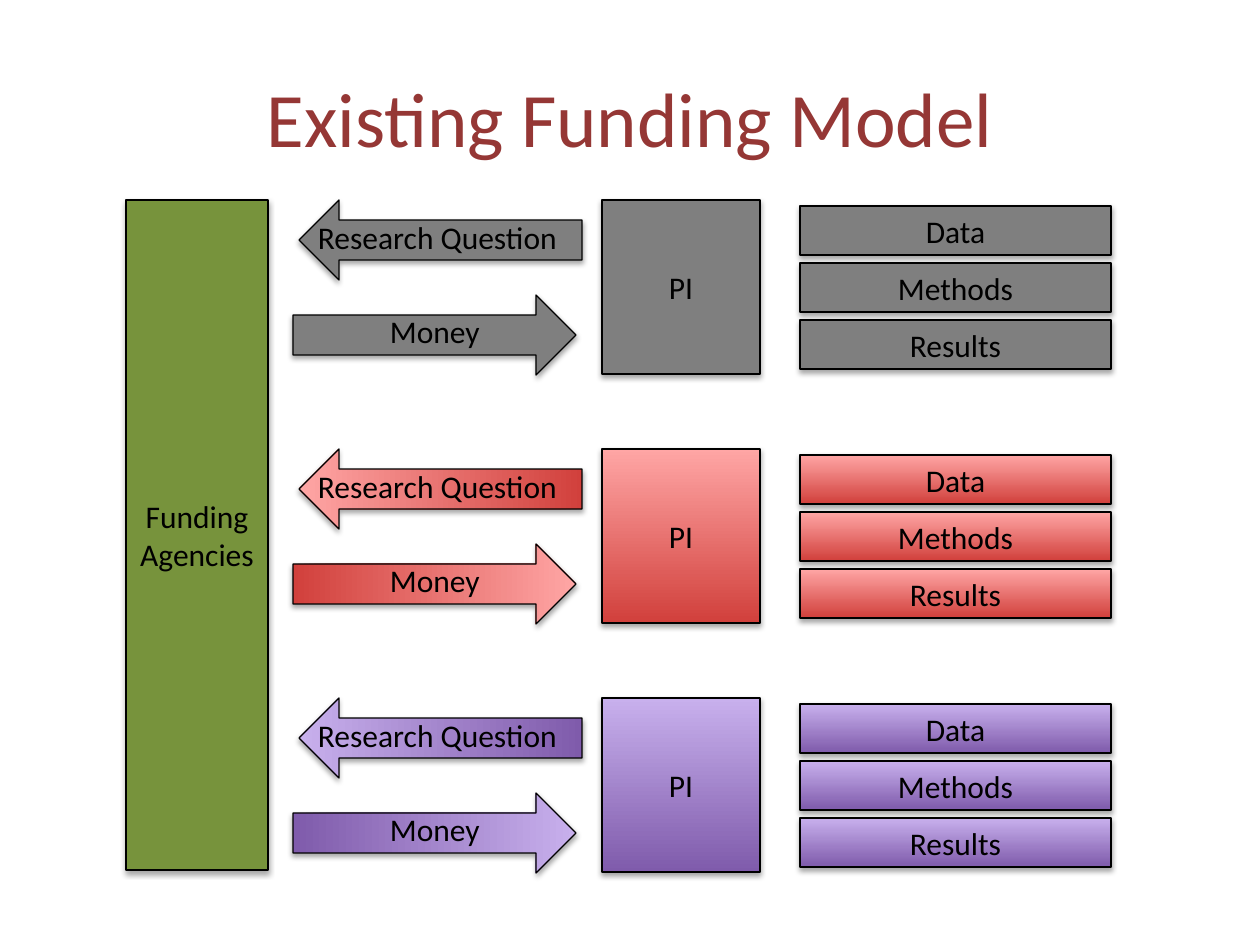
from pptx import Presentation
from pptx.dml.color import RGBColor
from pptx.enum.shapes import MSO_SHAPE
from pptx.enum.text import MSO_ANCHOR, PP_ALIGN
from pptx.util import Emu, Pt

BLACK = RGBColor(0x00, 0x00, 0x00)
MAROON = RGBColor(0x95, 0x37, 0x35)
GREEN = RGBColor(0x77, 0x93, 0x3C)
GRAY = RGBColor(0x7F, 0x7F, 0x7F)
DARK_RED = RGBColor(0xD1, 0x40, 0x3C)
LIGHT_RED = RGBColor(0xFF, 0xA6, 0xA5)
DARK_PURPLE = RGBColor(0x7F, 0x5B, 0xAB)
LIGHT_PURPLE = RGBColor(0xC8, 0xB0, 0xED)

PROJECT_COLORS = [(GRAY,), (DARK_RED, LIGHT_RED), (DARK_PURPLE, LIGHT_PURPLE)]
PROJECT_TOP = 200
PROJECT_PITCH = 249
PRODUCTS = ["Data", "Methods", "Results"]
PRODUCT_PITCH = 57


def px(length):
    return Emu(round(length * 914400 / 126))


class Diagram:
    font = "Calibri"
    text_size = 18
    title_size = 44
    line_width = 0.75

    def __init__(self, slide):
        self.slide = slide

    def set_text(self, frame, text, size, color, align):
        frame.text = text
        para = frame.paragraphs[0]
        para.alignment = align
        for span in para.runs:
            span.font.name = self.font
            span.font.size = Pt(size)
            span.font.color.rgb = color

    def paint(self, shape, colors):
        if len(colors) == 1:
            shape.fill.solid()
            shape.fill.fore_color.rgb = colors[0]
        else:
            shape.fill.gradient()
            shape.fill.gradient_angle = 90
            for stop, color in zip(shape.fill.gradient_stops, colors):
                stop.color.rgb = color
        shape.line.color.rgb = BLACK
        shape.line.width = Pt(self.line_width)

    def title(self, text, left, top, width, height):
        box = self.slide.shapes.title
        box.left, box.top, box.width, box.height = map(px, (left, top, width, height))
        box.text_frame.vertical_anchor = MSO_ANCHOR.MIDDLE
        self.set_text(box.text_frame, text, self.title_size, MAROON, PP_ALIGN.CENTER)

    def block(self, text, left, top, width, height, colors):
        shape = self.slide.shapes.add_shape(
            MSO_SHAPE.RECTANGLE, *map(px, (left, top, width, height)))
        self.paint(shape, colors)
        shape.text_frame.word_wrap = True
        shape.text_frame.vertical_anchor = MSO_ANCHOR.MIDDLE
        self.set_text(shape.text_frame, text, self.text_size, BLACK, PP_ALIGN.CENTER)

    def arrow(self, left, top, length, thickness, rotation, colors):
        inset = (length - thickness) / 2
        shape = self.slide.shapes.add_shape(
            MSO_SHAPE.UP_ARROW,
            *map(px, (left + inset, top - inset, thickness, length)))
        shape.rotation = rotation
        self.paint(shape, colors)

    def label(self, text, left, top, width, height):
        box = self.slide.shapes.add_textbox(*map(px, (left, top, width, height)))
        frame = box.text_frame
        frame.word_wrap = False
        frame.margin_left = frame.margin_top = 0
        frame.margin_right = frame.margin_bottom = 0
        self.set_text(frame, text, self.text_size, BLACK, PP_ALIGN.LEFT)

    def project(self, top, colors):
        self.block("PI", 602, top, 158, 174, colors)
        self.arrow(299, top, 283, 80, 270, colors)
        self.label("Research Question", 318, top + 18, 243, 38)
        self.arrow(293, top + 95, 283, 80, 90, colors)
        self.label("Money", 390, top + 112, 91, 38)
        for row, product in enumerate(PRODUCTS):
            self.block(product, 800, top + 6 + row * PRODUCT_PITCH, 311, 49, colors)


def main():
    deck = Presentation()
    deck.slide_width, deck.slide_height = px(1260), px(945)
    page = deck.slides.add_slide(deck.slide_layouts[5])
    diagram = Diagram(page)
    diagram.title("Existing Funding Model", 63, 38, 1134, 158)
    diagram.block("Funding Agencies", 126, PROJECT_TOP, 142, 670, (GREEN,))
    for index, colors in enumerate(PROJECT_COLORS):
        diagram.project(PROJECT_TOP + index * PROJECT_PITCH, colors)
    deck.save("out.pptx")


if __name__ == "__main__":
    main()
